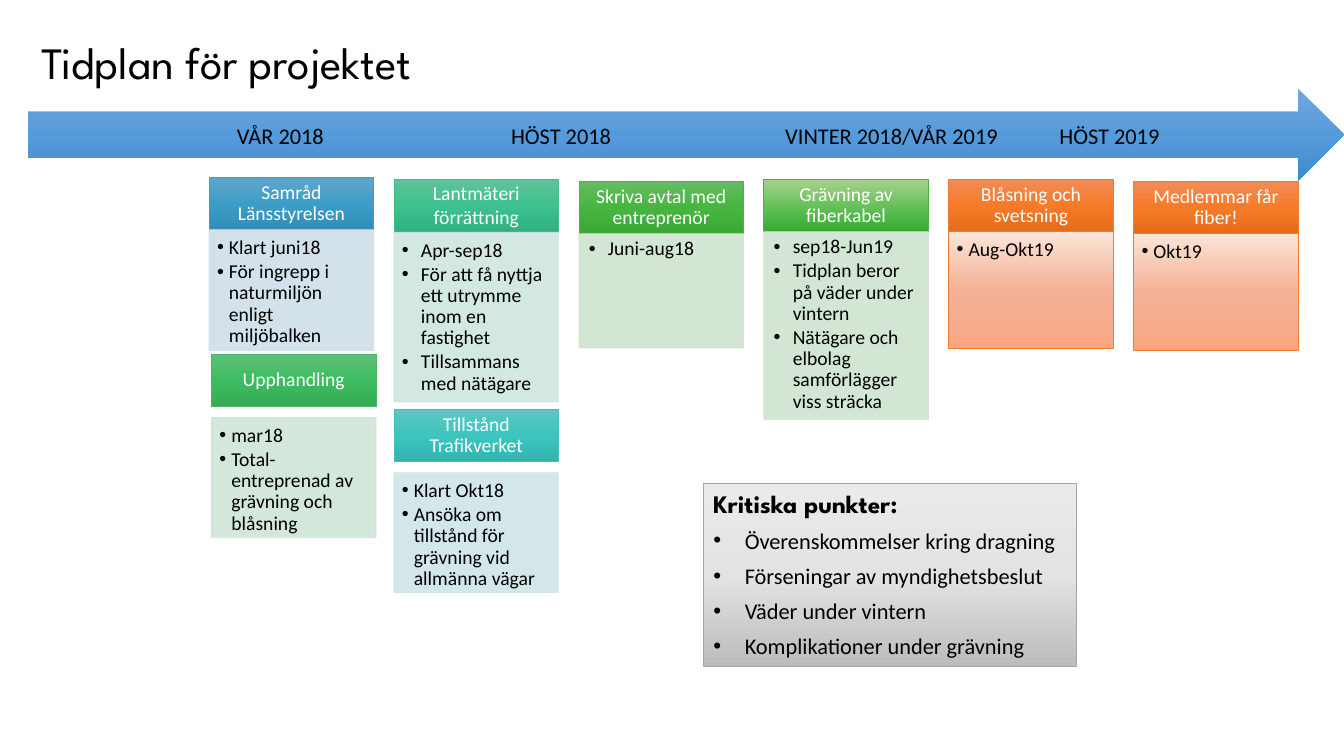
from dataclasses import dataclass

from lxml import etree
from pptx import Presentation
from pptx import util as u
from pptx.dml.color import RGBColor
from pptx.enum import shapes, text
from pptx.oxml import ns


@dataclass(frozen=True)
class Theme:
    body_font: str = "Calibri"
    display_font: str = "League Spartan"
    ink: str = "000000"
    paper: str = "FFFFFF"
    title_size: int = 32
    critical_size: int = 18
    period_size: int = 16
    step_size: int = 14
    hairline: float = 0.5
    tight: float = 0.9
    arrow: tuple = ((0, "71A6DB"), (50, "559BDB"), (100, "448ACA"))
    critical: tuple = ((0, "EBEAEA"), (50, "E4E3E3"), (100, "BDBCBC"))
    critical_edge: str = "A5A5A5"


@dataclass(frozen=True)
class Tone:
    head: tuple
    head_edge: str
    body: tuple
    body_edge: str
    body_alpha: int = 90


@dataclass(frozen=True)
class Box:
    left: float
    top: float
    width: float
    height: float

    def emu(self):
        return [u.Cm(side) for side in (self.left, self.top, self.width, self.height)]


@dataclass(frozen=True)
class Step:
    column: int
    top: float
    height: float
    heading: tuple
    points: tuple
    tone: Tone
    nudge: float = 0
    gap: float = 0
    indent: float = 0.3
    insets: tuple = (0.2, 0.2, 0.25, 0.28)


THEME = Theme()
BLUE = Tone(((0, "61A6C8"), (50, "3E9DC7"), (100, "308FB8")), "449BC1",
            ((0, "CFDEE9"),), "CFDEE9")
TEAL = Tone(((0, "60C6C1"), (50, "3DC4BF"), (100, "30B5AF")), "43BEB9",
            ((0, "CFE5E8"),), "CFE5E8")
MINT = Tone(((0, "60C39A"), (50, "3DC18E"), (100, "31B180")), "43BB8D",
            ((0, "CFE6E0"),), "CFE6E0")
EMERALD = Tone(((0, "60C077"), (50, "3FBC61"), (100, "33AC54")), "45B664",
               ((0, "CFE5D8"),), "CFE5D8")
GREEN = Tone(((0, "65BC61"), (50, "47B641"), (100, "3BA735")), "4CB146",
             ((0, "CFE4D0"),), "CFE4D0")
LIME = Tone(((0, "A9D18E"), (77, "48B740"), (100, "3CA735")), "4CB146",
            ((0, "CFE4D0"),), "CFE4D0")
ORANGE = Tone(((0, "F18C57"), (50, "F67B28"), (100, "E56C19")), "ED7D31",
              ((0, "FBE5D6"), (50, "F5B196"), (100, "F8A582")), "ED7D31", 100)

FIRST_COLUMN, COLUMN_STEP, CARD_WIDTH, HEAD_HEIGHT = 5.27, 4.66, 4.15, 1.32
FIRST_PERIOD, PERIOD_STEP = 5.18, 6.91
WIDE_INDENT = 0.48
PLAIN_INSETS = (0.25, 0.13, 0.25, 0.13)
HEAD_INSETS = (0.25, 0.15, 0.25, 0.15)

PERIODS = ("VÅR 2018", "HÖST 2018", "VINTER 2018/VÅR 2019", "HÖST 2019")
STEPS = (
    Step(0, 4.47, 4.37, ("Samråd Länsstyrelsen",),
         ("Klart juni18", "För ingrepp i naturmiljön enligt miljöbalken"), BLUE),
    Step(0, 8.92, 4.63, ("Upphandling",),
         ("mar18", "Total-entreprenad av grävning och blåsning"), EMERALD,
         nudge=0.06, gap=0.28),
    Step(1, 4.53, 5.6, ("Lantmäteri", "förrättning"),
         ("Apr-sep18", "För att få nyttja ett utrymme inom en fastighet",
          "Tillsammans med nätägare"), MINT, indent=WIDE_INDENT),
    Step(1, 10.31, 4.62, ("Tillstånd Trafikverket",),
         ("Klart Okt18", "Ansöka om tillstånd för grävning vid allmänna vägar"),
         TEAL, gap=0.28),
    Step(2, 4.57, 4.2, ("Skriva avtal med entreprenör",), ("Juni-aug18",), GREEN,
         indent=WIDE_INDENT, insets=PLAIN_INSETS),
    Step(3, 4.52, 6.05, ("Grävning av fiberkabel",),
         ("sep18-Jun19", "Tidplan beror på väder under vintern",
          "Nätägare och elbolag samförlägger viss sträcka"), LIME,
         indent=WIDE_INDENT, insets=PLAIN_INSETS),
    Step(4, 4.52, 4.26, ("Blåsning och svetsning",), ("Aug-Okt19",), ORANGE),
    Step(5, 4.57, 4.26, ("Medlemmar får fiber!",), ("Okt19",), ORANGE),
)
RISKS = ("Överenskommelser kring dragning", "Förseningar av myndighetsbeslut",
         "Väder under vintern", "Komplikationer under grävning")


def add_color(parent, color, alpha=100):
    swatch = etree.SubElement(parent, ns.qn("a:srgbClr"), val=color)
    if alpha < 100:
        etree.SubElement(swatch, ns.qn("a:alpha"), val=str(alpha * 1000))


def paint(shape, stops, edge=None, alpha=100):
    shape.shadow.inherit = False
    if len(stops) == 1:
        shape.fill.solid()
        solid = shape._element.spPr.find(ns.qn("a:solidFill"))
        add_color(solid, stops[0][1], alpha)
    else:
        shape.fill.gradient()
        gradient = shape._element.spPr.find(ns.qn("a:gradFill"))
        for child in list(gradient):
            gradient.remove(child)
        stop_list = etree.SubElement(gradient, ns.qn("a:gsLst"))
        for position, color in stops:
            stop = etree.SubElement(stop_list, ns.qn("a:gs"), pos=str(position * 1000))
            add_color(stop, color)
        etree.SubElement(gradient, ns.qn("a:lin"), ang="5400000", scaled="0")
    if edge is None:
        shape.line.fill.background()
        return
    shape.line.width = u.Pt(THEME.hairline)
    shape.line.fill.solid()
    add_color(shape.line._ln.find(ns.qn("a:solidFill")), edge, alpha)


def set_frame(shape, insets, anchor):
    frame = shape.text_frame
    frame.word_wrap = True
    frame.vertical_anchor = anchor
    frame.margin_left, frame.margin_top, frame.margin_right, frame.margin_bottom = map(u.Cm, insets)
    return frame


def write(frame, line, size, color=THEME.ink, font=THEME.body_font, bold=False,
          align=text.PP_ALIGN.LEFT, spacing=THEME.tight, before=0, after=0, bullet=None):
    first = frame.paragraphs[0]
    paragraph = frame.add_paragraph() if first.runs else first
    paragraph.alignment = align
    paragraph.line_spacing = spacing
    paragraph.space_before, paragraph.space_after = u.Pt(before), u.Pt(after)
    if bullet:
        properties = paragraph._p.get_or_add_pPr()
        properties.set("marL", str(u.Cm(bullet)))
        properties.set("indent", str(-u.Cm(bullet)))
        etree.SubElement(properties, ns.qn("a:buFont"), typeface="Arial")
        etree.SubElement(properties, ns.qn("a:buChar"), char="•")
    run = paragraph.add_run()
    run.text = line
    run.font.size, run.font.name, run.font.bold = u.Pt(size), font, bold
    run.font.color.rgb = RGBColor.from_string(color)
    return paragraph


def add_title(slide, box):
    title = slide.shapes.add_textbox(*box.emu())
    frame = set_frame(title, PLAIN_INSETS, text.MSO_ANCHOR.BOTTOM)
    write(frame, "Tidplan för projektet", THEME.title_size, font=THEME.display_font)


def add_timeline(slide, box):
    arrow = slide.shapes.add_shape(shapes.MSO_SHAPE.RIGHT_ARROW, *box.emu())
    paint(arrow, THEME.arrow)
    band = Box(box.left + 0.08, box.top + 0.35, box.width - 1.24, 1.73)
    periods = slide.shapes.add_textbox(*band.emu())
    frame = set_frame(periods, (0, 0.41, 0, 0.41), text.MSO_ANCHOR.MIDDLE)
    labels = write(frame, "".join(f"\t{period}" for period in PERIODS),
                   THEME.period_size, after=5.6)
    tabs = etree.SubElement(labels._p.get_or_add_pPr(), ns.qn("a:tabLst"))
    for index in range(len(PERIODS)):
        position = u.Cm(FIRST_PERIOD + index * PERIOD_STEP)
        etree.SubElement(tabs, ns.qn("a:tab"), pos=str(position), algn="l")


def add_step(slide, box, step):
    head_box = Box(box.left, box.top, box.width, HEAD_HEIGHT)
    drop = HEAD_HEIGHT + step.gap
    body_box = Box(box.left, box.top + drop, box.width, box.height - drop)

    head = slide.shapes.add_shape(shapes.MSO_SHAPE.RECTANGLE, *head_box.emu())
    paint(head, step.tone.head, step.tone.head_edge)
    frame = set_frame(head, HEAD_INSETS, text.MSO_ANCHOR.MIDDLE)
    for line in step.heading:
        write(frame, line, THEME.step_size, THEME.paper,
              align=text.PP_ALIGN.CENTER, after=2.1 if len(step.heading) > 1 else 4.9)

    body = slide.shapes.add_shape(shapes.MSO_SHAPE.RECTANGLE, *body_box.emu())
    paint(body, step.tone.body, step.tone.body_edge, step.tone.body_alpha)
    frame = set_frame(body, step.insets, text.MSO_ANCHOR.TOP)
    for point in step.points:
        write(frame, point, THEME.step_size, after=2.1, bullet=step.indent)


def add_critical_points(slide, box):
    panel = slide.shapes.add_shape(shapes.MSO_SHAPE.RECTANGLE, *box.emu())
    paint(panel, THEME.critical, THEME.critical_edge)
    frame = set_frame(panel, PLAIN_INSETS, text.MSO_ANCHOR.TOP)
    write(frame, "Kritiska punkter:", THEME.critical_size,
          font=THEME.display_font, bold=True, spacing=1.0)
    for risk in RISKS:
        write(frame, risk, THEME.period_size, spacing=1.0, before=6, bullet=0.79)


def main():
    deck = Presentation()
    deck.slide_width, deck.slide_height = u.Cm(33.87), u.Cm(19.05)
    slide = deck.slides.add_slide(deck.slide_layouts[6])
    add_title(slide, Box(0.79, 0.84, 29.03, 1.55))
    add_timeline(slide, Box(0.71, 2.24, 33.16, 2.31))
    for step in STEPS:
        left = FIRST_COLUMN + step.column * COLUMN_STEP + step.nudge
        add_step(slide, Box(left, step.top, CARD_WIDTH, step.height), step)
    add_critical_points(slide, Box(17.73, 12.17, 9.4, 4.62))
    deck.save("out.pptx")


if __name__ == "__main__":
    main()
